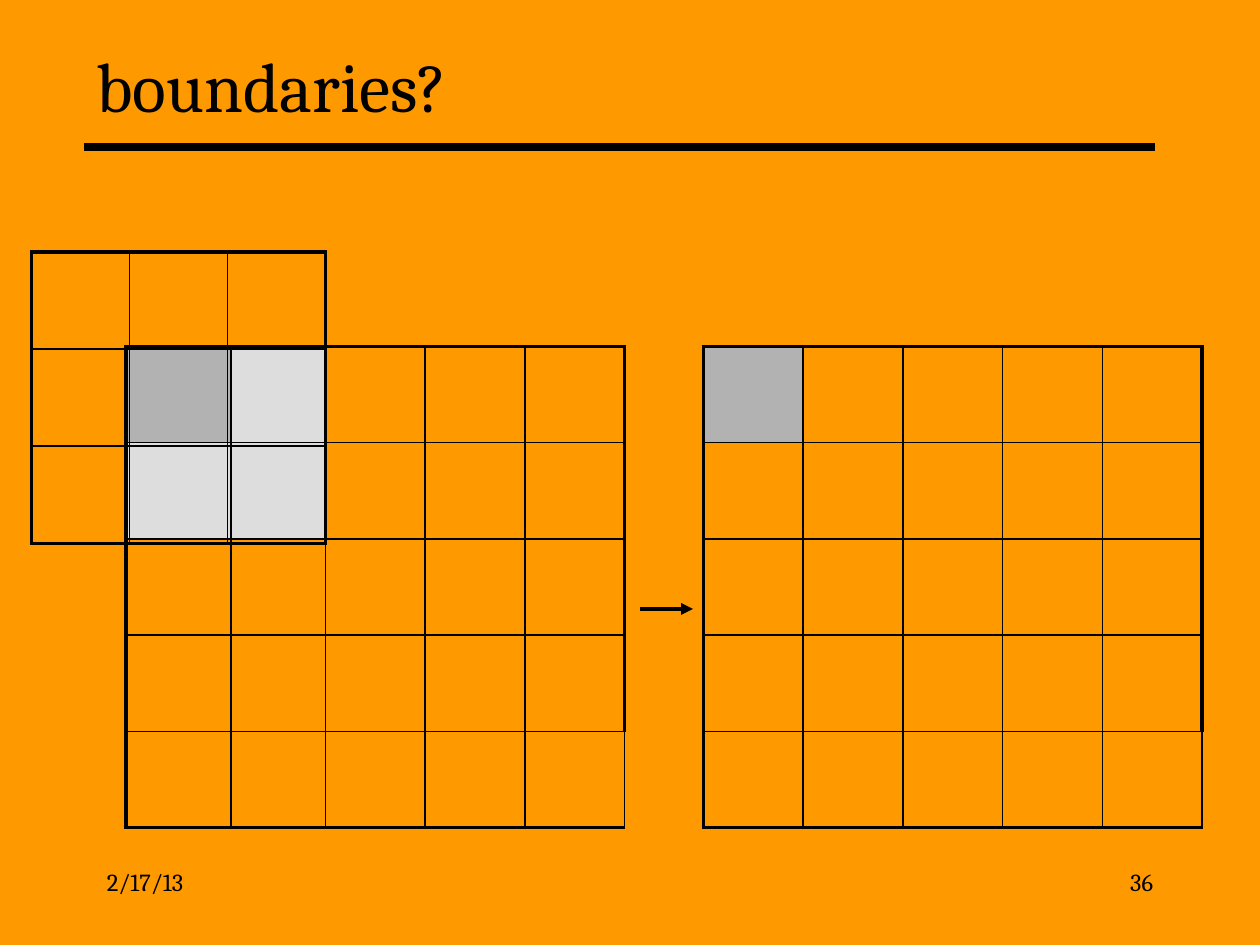
from pptx import Presentation
from pptx.dml.color import RGBColor as Rgb
from pptx.enum.shapes import MSO_CONNECTOR as Link
from pptx.enum.text import MSO_ANCHOR as Anchor, PP_ALIGN as Align
from pptx.oxml.ns import qn
from pptx.util import Pt
from lxml.etree import SubElement as Sub

HUES = {"back": "FF9900", "ink": "000000", "mid": "B2B2B2", "pale": "DDDDDD"}
FONT = "Cambria"
THIN, THICK = 1, 2.25


def hue(name):
    return Rgb.from_string(HUES[name])


def add_text(slide, box, text, size, align=Align.LEFT, anchor=Anchor.TOP):
    frame = slide.shapes.add_textbox(*map(Pt, box)).text_frame
    frame.word_wrap = True
    frame.vertical_anchor = anchor
    frame.text = text
    para = frame.paragraphs[0]
    para.alignment = align
    font = para.runs[0].font
    font.name, font.size = FONT, Pt(size)
    font.color.rgb = hue("ink")


def add_line(slide, left, top, width, weight, arrow=False):
    line = slide.shapes.add_connector(
        Link.STRAIGHT, Pt(left), Pt(top), Pt(left + width), Pt(top))
    line.line.color.rgb = hue("ink")
    line.line.width = Pt(weight)
    if arrow:
        Sub(line.line._get_or_add_ln(), qn("a:tailEnd"), type="triangle")
    Sub(line._element.spPr, qn("a:effectLst"))


def set_edge(cell, side, weight):
    edge = Sub(cell._tc.get_or_add_tcPr(), qn("a:ln" + side), w=str(Pt(weight)))
    fill = Sub(edge, qn("a:solidFill"))
    Sub(fill, qn("a:srgbClr"), val=HUES["ink"])


def add_grid(slide, left, top, cols, rows, fills, corner=THICK):
    shape = slide.shapes.add_table(
        len(rows), len(cols), Pt(left), Pt(top), Pt(sum(cols)), Pt(sum(rows)))
    table = shape.table
    table.first_row = table.horz_banding = False
    for col, width in zip(table.columns, cols):
        col.width = Pt(width)
    for row, height in zip(table.rows, rows):
        row.height = Pt(height)
    end_r, end_c = len(rows) - 1, len(cols) - 1
    for r in range(len(rows)):
        for c in range(len(cols)):
            cell = table.cell(r, c)
            outer = {"L": c == 0, "R": c == end_c, "T": r == 0, "B": r == end_r}
            for side, thick in outer.items():
                set_edge(cell, side, THICK if thick else THIN)
            if (r, c) in fills:
                cell.fill.solid()
                cell.fill.fore_color.rgb = hue(fills[r, c])
            else:
                cell.fill.background()
    last = table.cell(end_r, end_c)._tc.tcPr
    last.find(qn("a:lnR")).set("w", str(Pt(corner)))


def add_head(slide, left, top, width, height):
    add_text(slide, (left, top, width, height), "boundaries?", 40,
             anchor=Anchor.MIDDLE)
    add_line(slide, left, top + height + 6, width, 4.5)


def add_foot(slide, left, top, width, height):
    part = 150
    add_text(slide, (left, top, part, height), "2/17/13", 14)
    add_text(slide, (left + width - part, top, part, height), "36", 14,
             Align.RIGHT)


def add_body(slide, left, top):
    rows = [55] * 5
    mask = {(0, 0): "mid", (0, 1): "pale", (1, 0): "pale", (1, 1): "pale"}
    grid_x, grid_y = left + 54, top + 54
    add_grid(slide, grid_x, grid_y, [60, 54, 57, 57, 57], rows, mask, THIN)
    add_grid(slide, grid_x + 330, grid_y, [57] * 5, rows, {(0, 0): "mid"}, THIN)
    add_line(slide, grid_x + 294, grid_y + 150, 30, THICK, True)
    add_grid(slide, left, top, [56] * 3, [55.5] * 3, {})


def main():
    deck = Presentation()
    deck.slide_width, deck.slide_height = Pt(720), Pt(540)
    slide = deck.slides.add_slide(deck.slide_layouts[6])
    slide.background.fill.solid()
    slide.background.fill.fore_color.rgb = hue("back")
    add_head(slide, 48, 18, 612, 60)
    add_body(slide, 18, 144)
    add_foot(slide, 54, 492, 612, 36)
    deck.save("out.pptx")


if __name__ == "__main__":
    main()
